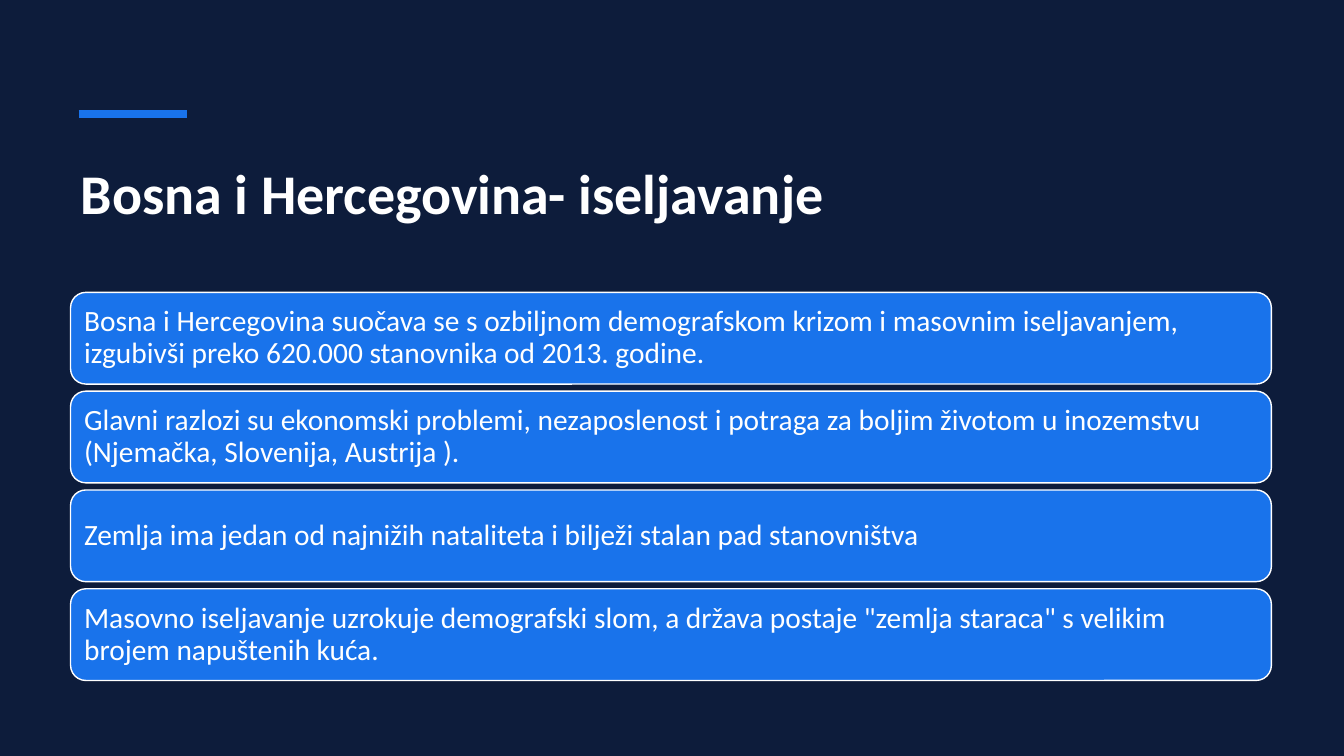
from dataclasses import dataclass

from lxml import etree
from pptx import Presentation
from pptx.dml.color import RGBColor
from pptx.enum.shapes import MSO_CONNECTOR, MSO_SHAPE
from pptx.enum.text import MSO_ANCHOR, PP_ALIGN
from pptx.oxml.ns import qn
from pptx.util import Inches, Pt

ROUND = MSO_SHAPE.ROUNDED_RECTANGLE
STRAIGHT = MSO_CONNECTOR.STRAIGHT
LEFT = PP_ALIGN.LEFT
TOP, MIDDLE = MSO_ANCHOR.TOP, MSO_ANCHOR.MIDDLE
TITLE_ONLY = 5


@dataclass(frozen=True)
class Theme:
    font: str = "Calibri"
    navy: RGBColor = RGBColor(0x0D, 0x1C, 0x3B)
    blue: RGBColor = RGBColor(0x19, 0x73, 0xEB)
    white: RGBColor = RGBColor(0xFF, 0xFF, 0xFF)
    title: int = 40
    body: int = 21
    rule: int = 6
    edge: int = 1


class Deck:
    """Draws on one slide; lengths are percentages of its width and height."""

    def __init__(self, theme):
        self.theme = theme
        self.file = Presentation()
        self.file.slide_width = Inches(13.33)
        self.file.slide_height = Inches(7.5)
        self.slide = self.file.slides.add_slide(self.file.slide_layouts[TITLE_ONLY])
        back = self.slide.background.fill
        back.solid()
        back.fore_color.rgb = theme.navy

    def x(self, share):
        return round(self.file.slide_width * share / 100)

    def y(self, share):
        return round(self.file.slide_height * share / 100)

    def label(self, shape, text, *, size, bold=False, anchor=MIDDLE,
              spacing=1.0, inset=(0.1, 0.05)):
        frame = shape.text_frame
        frame.word_wrap = True
        frame.vertical_anchor = anchor
        frame.margin_left = frame.margin_right = Inches(inset[0])
        frame.margin_top = frame.margin_bottom = Inches(inset[1])
        frame.text = text
        para = frame.paragraphs[0]
        para.alignment = LEFT
        para.line_spacing = spacing
        font = para.runs[0].font
        font.name, font.size, font.bold = self.theme.font, Pt(size), bold
        font.color.rgb = self.theme.white

    def title(self, text, left, top, width, height):
        shape = self.slide.shapes.title
        shape.left, shape.top = self.x(left), self.y(top)
        shape.width, shape.height = self.x(width), self.y(height)
        self.label(shape, text, size=self.theme.title, bold=True, anchor=TOP,
                   inset=(0.1, 0.07))

    def rule(self, left, right, top):
        line = self.slide.shapes.add_connector(
            STRAIGHT, self.x(left), self.y(top), self.x(right), self.y(top))
        line.line.color.rgb = self.theme.blue
        line.line.width = Pt(self.theme.rule)
        etree.SubElement(line._element.spPr, qn("a:effectLst"))

    def card(self, text, left, top, width, height):
        shape = self.slide.shapes.add_shape(
            ROUND, self.x(left), self.y(top), self.x(width), self.y(height))
        shape.shadow.inherit = False
        shape.fill.solid()
        shape.fill.fore_color.rgb = self.theme.blue
        shape.line.color.rgb = self.theme.white
        shape.line.width = Pt(self.theme.edge)
        # The rounded corners add a little to the text inset.
        self.label(shape, text, size=self.theme.body, spacing=0.9, inset=(0.09, 0.09))


FACTS = [
    "Bosna i Hercegovina suočava se s ozbiljnom demografskom krizom i masovnim "
    "iseljavanjem, izgubivši preko 620.000 stanovnika od 2013. godine.",
    "Glavni razlozi su ekonomski problemi, nezaposlenost i potraga za boljim "
    "životom u inozemstvu (Njemačka, Slovenija, Austrija ).",
    "Zemlja ima jedan od najnižih nataliteta i bilježi stalan pad stanovništva",
    "Masovno iseljavanje uzrokuje demografski slom, a država postaje "
    '"zemlja staraca" s velikim brojem napuštenih kuća.',
]
MARGIN, WIDTH = 5.25, 89.35
FIRST, STEP, HEIGHT = 38.67, 13.07, 12.13


def main():
    deck = Deck(Theme())
    deck.rule(5.85, 13.88, 15.07)
    deck.title("Bosna i Hercegovina- iseljavanje", MARGIN, 20, WIDTH, 16)
    for row, fact in enumerate(FACTS):
        deck.card(fact, MARGIN, FIRST + row * STEP, WIDTH, HEIGHT)
    deck.file.save("out.pptx")


if __name__ == "__main__":
    main()
